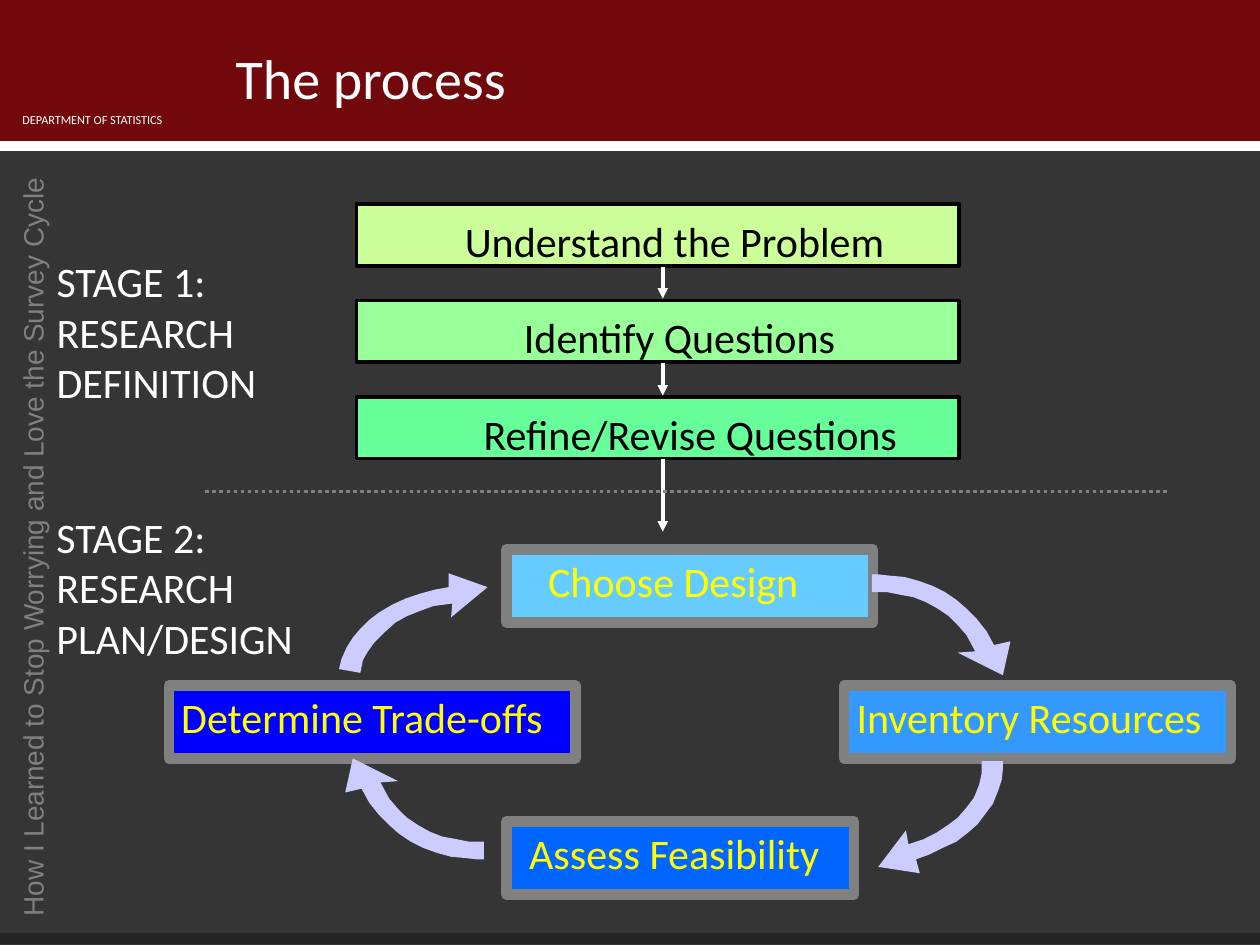
from lxml import etree
from pptx import Presentation
from pptx.dml.color import RGBColor
from pptx.enum import dml, shapes, text
from pptx.oxml.ns import qn
from pptx.util import Inches, Pt

WHITE = RGBColor(0xFF, 0xFF, 0xFF)
BLACK = RGBColor(0, 0, 0)
GRAY = RGBColor(0x80, 0x80, 0x80)
DARK = RGBColor(0x35, 0x35, 0x35)
FOOT = RGBColor(0x24, 0x24, 0x24)
MAROON = RGBColor(0x71, 0x08, 0x0C)
YELLOW = RGBColor(0xFF, 0xFF, 0)
LILAC = RGBColor(0xCC, 0xCC, 0xFF)

STEPS = [
    ("Understand the Problem", 3.59, 3.55, RGBColor(0xCC, 0xFF, 0x99)),
    ("Identify Questions", 4.06, 2.68, RGBColor(0x99, 0xFF, 0x99)),
    ("Refine/Revise Questions", 3.74, 3.49, RGBColor(0x66, 0xFF, 0x99)),
]
CYCLE = [
    ("Choose Design", 4.02, 4.36, 2.91, 0.33, RGBColor(0x66, 0xCC, 0xFF)),
    ("Inventory Resources", 6.7, 5.44, 3.07, 0.1, RGBColor(0x33, 0x99, 0xFF)),
    ("Assess Feasibility", 4.02, 6.52, 2.76, 0.18, RGBColor(0, 0x66, 0xFF)),
    ("Determine Trade-offs", 1.34, 5.44, 3.23, 0.1, RGBColor(0, 0, 0xFF)),
]
STAGES = [
    (1.98, 2.02, ["STAGE 1:", "RESEARCH", "DEFINITION"]),
    (4.01, 2.27, ["STAGE 2:", "RESEARCH", "PLAN/DESIGN"]),
]
EAST = [
    (6.92, 4.56), (6.92, 4.7), (7.04, 4.7), (7.14, 4.72), (7.25, 4.74),
    (7.35, 4.78), (7.44, 4.83), (7.53, 4.89), (7.6, 4.96), (7.67, 5.04),
    (7.74, 5.17), (7.6, 5.18), (7.96, 5.36), (8.02, 5.09), (7.89, 5.12),
    (7.83, 5.01), (7.75, 4.91), (7.67, 4.83), (7.59, 4.76), (7.5, 4.7),
    (7.4, 4.65), (7.29, 4.61), (7.18, 4.58), (7.07, 4.57), (6.98, 4.56),
]
SOUTH = [
    (7.96, 6.04), (7.79, 6.04), (7.79, 6.14), (7.77, 6.23), (7.73, 6.33),
    (7.67, 6.41), (7.6, 6.49), (7.52, 6.55), (7.43, 6.61), (7.33, 6.66),
    (7.21, 6.7), (7.19, 6.59), (6.97, 6.88), (7.3, 6.93), (7.27, 6.82),
    (7.38, 6.78), (7.48, 6.73), (7.59, 6.68), (7.68, 6.61), (7.76, 6.54),
    (7.82, 6.46), (7.88, 6.38), (7.92, 6.28), (7.95, 6.19), (7.96, 6.1),
]
WEST = [(10.76 - x, 11.38 - y) for x, y in EAST]
NORTH = [
    (2.69, 5.31), (2.86, 5.34), (2.88, 5.24), (2.92, 5.17), (2.97, 5.1),
    (3.05, 5.02), (3.14, 4.94), (3.23, 4.89), (3.33, 4.85), (3.44, 4.81),
    (3.59, 4.79), (3.58, 4.9), (3.87, 4.66), (3.56, 4.55), (3.56, 4.66),
    (3.45, 4.68), (3.34, 4.71), (3.22, 4.75), (3.11, 4.8), (3.01, 4.86),
    (2.93, 4.92), (2.86, 4.99), (2.8, 5.06), (2.75, 5.14), (2.71, 5.23),
]


def write(shape, lines, color, size=24, face="Calibri", left=0.1, wrap=False):
    """Write lines into a shape, one paragraph each."""
    frame = shape.text_frame
    frame.word_wrap = wrap
    frame.margin_left = Inches(left)
    frame.text = "\n".join(lines)
    for para in frame.paragraphs:
        para.alignment = text.PP_ALIGN.LEFT
        para.font.size = Pt(size)
        para.font.name = face
        para.font.color.rgb = color


def label(slide, x, y, w, h, lines, color, **style):
    """Add a text box."""
    box = slide.shapes.add_textbox(Inches(x), Inches(y), Inches(w), Inches(h))
    write(box, lines, color, **style)
    return box


def paint(shape, fill, edge=None, width=0):
    """Fill and outline a shape without shadow."""
    shape.shadow.inherit = False
    shape.fill.solid()
    shape.fill.fore_color.rgb = fill
    if edge is None:
        shape.line.fill.background()
    else:
        shape.line.color.rgb = edge
        shape.line.width = Pt(width)


def block(slide, x, y, w, h, fill, edge=None, width=0):
    """Add a rectangle."""
    shape = slide.shapes.add_shape(
        shapes.MSO_SHAPE.RECTANGLE, Inches(x), Inches(y), Inches(w), Inches(h))
    paint(shape, fill, edge, width)
    shape.text_frame.vertical_anchor = text.MSO_ANCHOR.TOP
    return shape


def rule(slide, start, end, color, width=2, dash=None, head=False):
    """Add a straight line, with an arrowhead on request."""
    line = slide.shapes.add_connector(
        shapes.MSO_CONNECTOR.STRAIGHT, *map(Inches, start + end))
    line.line.color.rgb = color
    line.line.width = Pt(width)
    if dash:
        line.line.dash_style = dash
    if head:
        etree.SubElement(line.line._get_or_add_ln(), qn("a:tailEnd"), type="triangle")
    etree.SubElement(line._element.spPr, qn("a:effectLst"))


def curve(slide, points):
    """Add a curved block arrow through points."""
    first, *rest = [(Inches(x), Inches(y)) for x, y in points]
    pen = slide.shapes.build_freeform(*first)
    pen.add_line_segments(rest, close=True)
    paint(pen.convert_to_shape(), LILAC)


def frame(slide):
    """Draw the bands and the fixed labels."""
    block(slide, 0, 1.19, 10, 6.31, DARK)
    block(slide, 0, 0, 10, 1.16, MAROON)
    rule(slide, (0, 1.16), (10, 1.16), WHITE, 6)
    side = label(slide, -2.81, 4.2, 6.14, 0.37,
                 ["How I Learned to Stop Worrying and Love the Survey Cycle"],
                 GRAY, size=16, face="Arial", wrap=True)
    side.rotation = 270
    side.text_frame.paragraphs[0].alignment = text.PP_ALIGN.RIGHT
    rule(slide, (0, 7.45), (10, 7.45), FOOT, 6)
    label(slide, 0.08, 0.84, 1.61, 0.22, ["DEPARTMENT OF STATISTICS"], WHITE,
          size=7, wrap=True)


def head(slide, words):
    """Place the title in front of the bands."""
    title = slide.shapes.title
    title.left, title.top = Inches(1.77), Inches(0.14)
    title.width, title.height = Inches(8.23), Inches(0.94)
    write(title, [words], WHITE, size=32, wrap=True)
    title.text_frame.vertical_anchor = text.MSO_ANCHOR.MIDDLE
    slide.shapes._spTree.append(title._element)


def main():
    """Build and save the slide."""
    deck = Presentation()
    deck.slide_width, deck.slide_height = Inches(10), Inches(7.5)
    slide = deck.slides.add_slide(deck.slide_layouts[5])
    frame(slide)
    for i, (words, x, w, fill) in enumerate(STEPS):
        y = 1.62 + 0.765 * i
        block(slide, 2.83, y, 4.78, 0.49, fill, BLACK, 2)
        label(slide, x, y + 0.04, w, 0.5, [words], BLACK)
    for top, end in [(2.12, 2.37), (2.88, 3.14), (3.64, 4.22)]:
        rule(slide, (5.26, top), (5.26, end), WHITE, head=True)
    for words, x, y, w, left, fill in CYCLE:
        box = block(slide, x, y, w, 0.58, fill, GRAY, 6)
        write(box, [words], YELLOW, left=left, wrap=True)
    rule(slide, (1.63, 3.9), (9.28, 3.9), GRAY, dash=dml.MSO_LINE.ROUND_DOT)
    for y, w, lines in STAGES:
        label(slide, 0.35, y, w, 1.3, lines, WHITE)
    for points in (EAST, SOUTH, WEST, NORTH):
        curve(slide, points)
    head(slide, "The process")
    deck.save("out.pptx")


if __name__ == "__main__":
    main()
